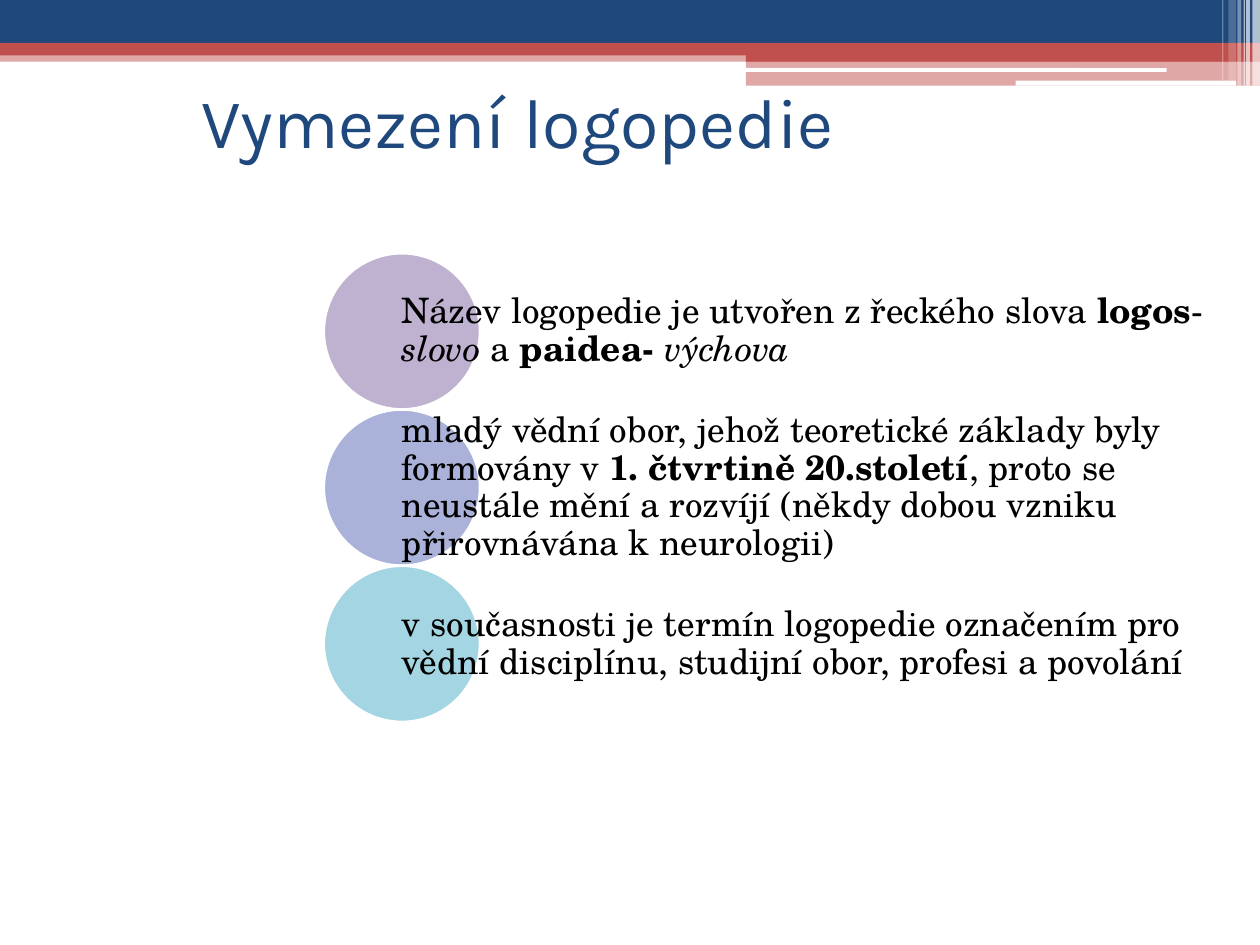
from dataclasses import dataclass

from pptx import Presentation
from pptx.dml.color import RGBColor
from pptx.enum.shapes import MSO_SHAPE
from pptx.enum.text import MSO_ANCHOR, MSO_AUTO_SIZE, PP_ALIGN
from pptx.oxml.xmlchemy import OxmlElement
from pptx.util import Emu, Pt

PX = 9144


def px(n):
    return Emu(n * PX)


@dataclass(frozen=True)
class Theme:
    navy: str = "1F497D"
    red: str = "C0504D"
    white: str = "FFFFFF"
    black: str = "000000"
    purple: str = "8064A2"
    indigo: str = "5767B4"
    teal: str = "4BACC6"
    title_font: str = "Karla"
    body_font: str = "TeX Gyre Schola"
    title_size: int = 40
    body_size: int = 20
    outline: float = 1.5


class SlideBuilder:
    def __init__(self, prs, theme):
        self.theme = theme
        self.s = prs.slides.add_slide(prs.slide_layouts[5])

    def style_run(self, r, font, size, color, bold=False, italic=False):
        r.font.name = font
        r.font.size = Pt(size)
        r.font.bold = bold
        r.font.italic = italic
        r.font.color.rgb = RGBColor.from_string(color)

    def shape(self, kind, box, color, alpha=100, outline=None):
        sp = self.s.shapes.add_shape(kind, *map(px, box))
        sp.shadow.inherit = False
        sp.fill.solid()
        sp.fill.fore_color.rgb = RGBColor.from_string(color)
        if alpha < 100:
            a = OxmlElement("a:alpha")
            a.set("val", str(alpha * 1000))
            sp.fill._xPr.solidFill[0].append(a)
        if outline:
            sp.line.color.rgb = RGBColor.from_string(outline)
            sp.line.width = Pt(self.theme.outline)
        else:
            sp.line.fill.background()
        return sp

    def title(self, text, box):
        t = self.theme
        sp = self.s.shapes.title
        sp.left, sp.top, sp.width, sp.height = map(px, box)
        tf = sp.text_frame
        tf.text = text
        tf.auto_size = MSO_AUTO_SIZE.NONE
        tf.vertical_anchor = MSO_ANCHOR.MIDDLE
        p = tf.paragraphs[0]
        p.alignment = PP_ALIGN.LEFT
        self.style_run(p.runs[0], t.title_font, t.title_size, t.navy)
        self.s.shapes._spTree.append(sp._element)

    def text(self, runs, box):
        t = self.theme
        tf = self.s.shapes.add_textbox(*map(px, box)).text_frame
        tf.word_wrap = True
        tf.vertical_anchor = MSO_ANCHOR.MIDDLE
        tf.margin_left = tf.margin_right = 0
        tf.margin_top = tf.margin_bottom = px(3)
        p = tf.paragraphs[0]
        p.line_spacing = 0.9
        for text, style in runs:
            r = p.add_run()
            r.text = text
            self.style_run(r, t.body_font, t.body_size, t.black,
                           bold=style == "b", italic=style == "i")


def main():
    prs = Presentation()
    prs.slide_width, prs.slide_height = px(1000), px(750)
    t = Theme()
    b = SlideBuilder(prs, t)

    bands = [
        ((0, 40, 1000, 9), t.red, 50),
        ((0, 0, 1000, 34), t.navy, 100),
        ((0, 34, 1000, 10), t.red, 100),
        ((592, 39, 408, 10), t.red, 100),
        ((592, 48, 408, 20), t.red, 50),
    ]
    for box, color, alpha in bands:
        b.shape(MSO_SHAPE.RECTANGLE, box, color, alpha)

    for box in [(591, 54, 335, 3), (806, 64, 175, 4)]:
        b.shape(MSO_SHAPE.ROUNDED_RECTANGLE, box, t.white)

    stripes = [
        (994, 6, 68, 65),
        (989, 3, 68, 65),
        (987, 1, 68, 60),
        (982, 3, 68, 40),
        (975, 6, 64, 20),
        (970, 1, 64, 30),
    ]
    for left, width, height, alpha in stripes:
        b.shape(MSO_SHAPE.RECTANGLE, (left, 0, width, height), t.white, alpha)

    b.title("Vymezení logopedie", (150, 33, 800, 125))

    items = [
        (t.purple, [
            ("Název logopedie je utvořen z řeckého slova ", ""),
            ("logos", "b"),
            ("- ", ""),
            ("slovo", "i"),
            (" a ", ""),
            ("paidea- ", "b"),
            ("výchova", "i"),
        ]),
        (t.indigo, [
            ("mladý vědní obor, jehož teoretické základy byly formovány v ", ""),
            ("1. čtvrtině 20.století", "b"),
            (", proto se neustále mění a rozvíjí (někdy dobou vzniku "
             "přirovnávána k neurologii)", ""),
        ]),
        (t.teal, [
            ("v současnosti je termín logopedie označením pro vědní "
             "disciplínu, studijní obor, profesi a povolání", ""),
        ]),
    ]
    left, top, size = 257, 201, 124
    for i, (color, runs) in enumerate(items):
        y = top + i * size
        b.shape(MSO_SHAPE.OVAL, (left, y, size, size), color, 50, t.white)
        b.text(runs, (left + size // 2, y, 662, size))

    prs.save("out.pptx")


if __name__ == "__main__":
    main()
